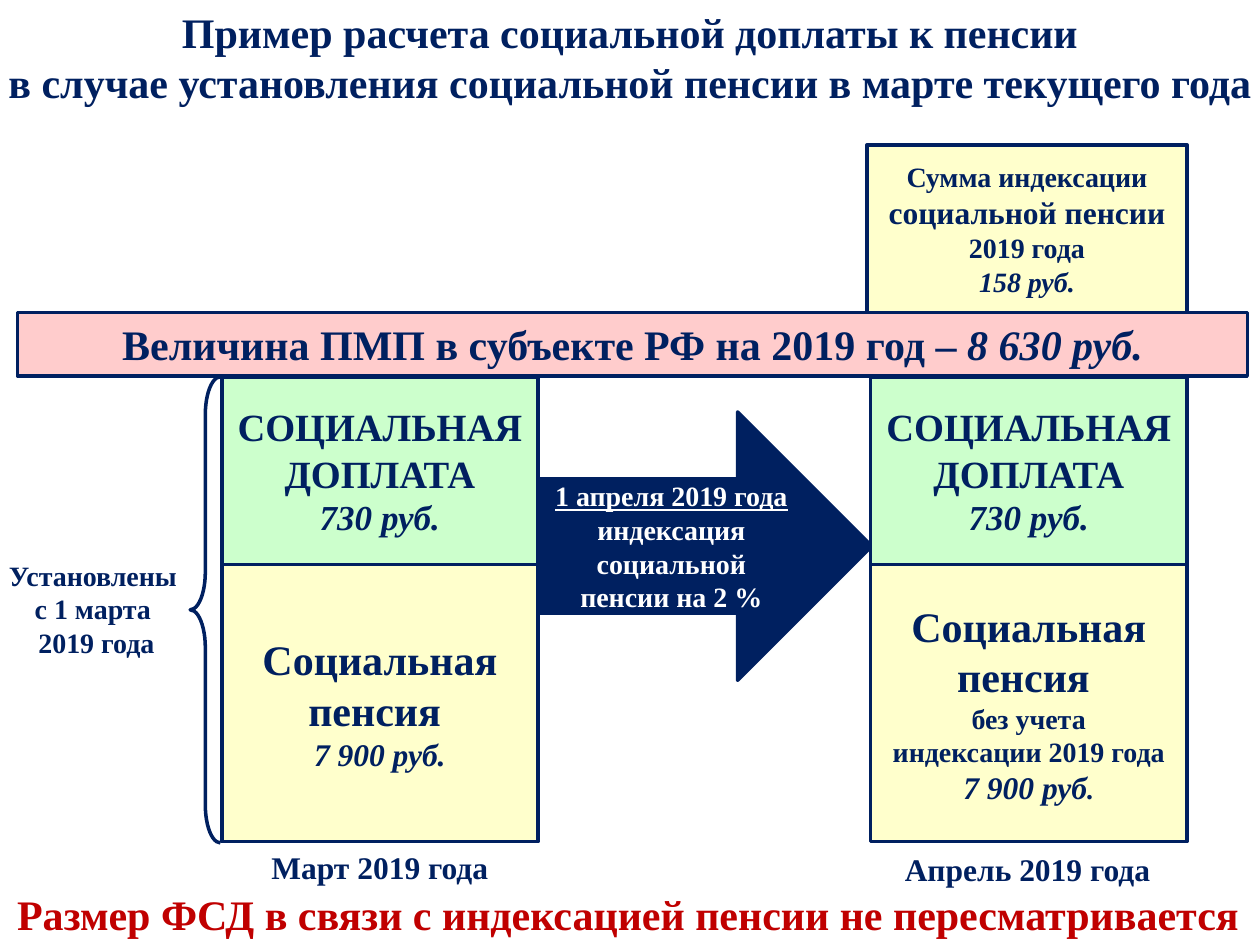
"""Build a slide showing how a social pension supplement is calculated."""
from pptx import Presentation
from pptx.dml.color import RGBColor
from pptx.enum.shapes import MSO_SHAPE
from pptx.enum.text import MSO_ANCHOR, PP_ALIGN
from pptx.util import Pt

RECT = MSO_SHAPE.RECTANGLE
BRACE = MSO_SHAPE.LEFT_BRACE
ARROW = MSO_SHAPE.RIGHT_ARROW
MIDDLE, TOP = MSO_ANCHOR.MIDDLE, MSO_ANCHOR.TOP
CENTER = PP_ALIGN.CENTER
NAVY, RED, WHITE = "002060", "C00000", "FFFFFF"
PINK, GREEN, YELLOW = "FFCCCC", "CCFFCC", "FFFFCC"


def write(shape, paragraphs, color=NAVY, anchor=TOP):
    frame = shape.text_frame
    frame.word_wrap = True
    frame.vertical_anchor = anchor
    for index, pieces in enumerate(paragraphs):
        paragraph = frame.add_paragraph() if index else frame.paragraphs[0]
        paragraph.alignment = CENTER
        for text, size, style in pieces:
            run = paragraph.add_run()
            run.text = text
            run.font.name = "Times New Roman"
            run.font.size = Pt(size)
            run.font.bold = True
            run.font.italic = style == "italic"
            run.font.underline = style == "underline"
            run.font.color.rgb = RGBColor.from_string(color)


def add_figure(kind, box, fill):
    figure = slide.shapes.add_shape(kind, *map(Pt, box))
    figure.shadow.inherit = False
    figure.fill.solid()
    figure.fill.fore_color.rgb = RGBColor.from_string(fill)
    figure.line.color.rgb = RGBColor.from_string(NAVY)
    figure.line.width = Pt(2)
    return figure


prs = Presentation()
prs.slide_width, prs.slide_height = Pt(720), Pt(540)
slide = prs.slides.add_slide(prs.slide_layouts[6])

march_left, april_left, column_width = 126.7, 497.5, 180.7
supplement_top, supplement_height = 215.3, 107.3
pension_top, pension_height = 322.6, 158.4

threshold = add_figure(RECT, (10.1, 178.6, 702.7, 36.3), PINK)
write(threshold, [[("Величина ПМП в субъекте РФ на 2019 год – ", 24, ""),
                   ("8 630 руб.", 24, "italic")]])

brace = add_figure(BRACE, (108.7, supplement_top, 17.3, 266.4), WHITE)
brace.adjustments[0] = 1.25
brace.adjustments[1] = 0.5

indexation = add_figure(ARROW, (307.4, 235.4, 190.8, 153.4), NAVY)
write(indexation, [[("1 апреля 2019 года ", 16, "underline"),
                    ("индексация социальной пенсии на 2 %", 16, "")]],
      WHITE, MIDDLE)

increase = add_figure(RECT, (495.4, 82.8, 182.9, 95.8), YELLOW)
write(increase, [
    [("Сумма индексации ", 16, ""), ("социальной пенсии", 18, "")],
    [("2019 года", 16, "")],
    [("158 руб.", 16, "italic")],
], anchor=MIDDLE)

pension_title = [("Социальная пенсия ", 24, "")]
march_pension = [pension_title, [("7 900 руб.", 18, "italic")]]
april_pension = [
    pension_title,
    [("без учета", 16, "")],
    [("индексации 2019 года", 16, "")],
    [("7 900 руб", 18, "italic"), (".", 16, "italic")],
]
for left, pension_lines in ((march_left, march_pension), (april_left, april_pension)):
    pension = add_figure(RECT, (left, pension_top, column_width, pension_height), YELLOW)
    write(pension, pension_lines, anchor=MIDDLE)
    supplement = add_figure(
        RECT, (left, supplement_top, column_width, supplement_height), GREEN)
    write(supplement, [[("СОЦИАЛЬНАЯ ДОПЛАТА", 22, "")],
                       [("730 руб.", 20, "italic")]], anchor=MIDDLE)

captions = [
    ((-35.3, 0, 790.6, 65.5), 24, NAVY,
     ["Пример расчета социальной доплаты к пенсии",
      "в случае установления социальной пенсии в марте текущего года"]),
    ((-7.2, 315.4, 124.6, 65.5), 16, NAVY,
     ["Установлены ", "с 1 марта ", "2019 года"]),
    ((march_left, 481, column_width, 28.8), 18, NAVY, ["Март 2019 года"]),
    ((april_left - 0.7, 482.4, column_width, 28.8), 18, NAVY, ["Апрель 2019 года"]),
    ((-1.4, 504, 720.7, 36), 24, RED,
     ["Размер ФСД в связи с индексацией пенсии не пересматривается"]),
]
for box, size, color, lines in captions:
    caption = slide.shapes.add_textbox(*map(Pt, box))
    write(caption, [[(line, size, "")] for line in lines], color)

prs.save("out.pptx")
